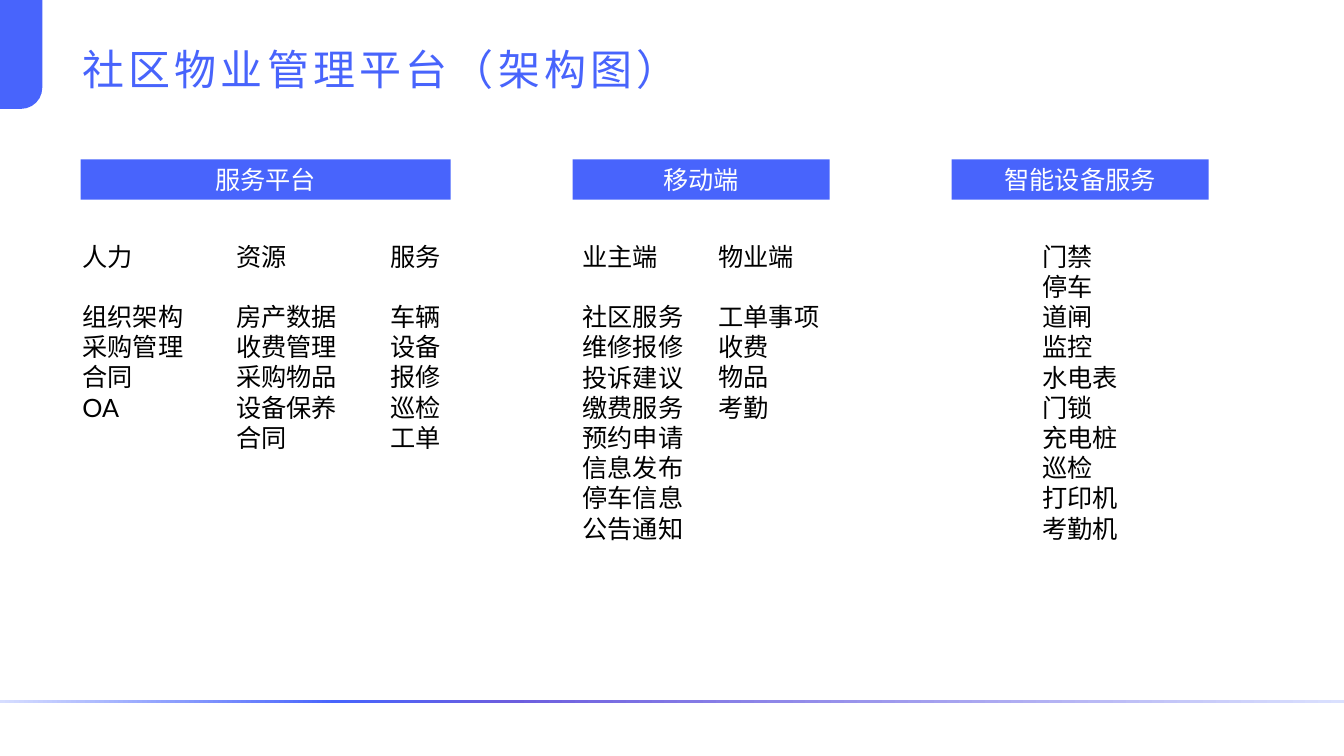
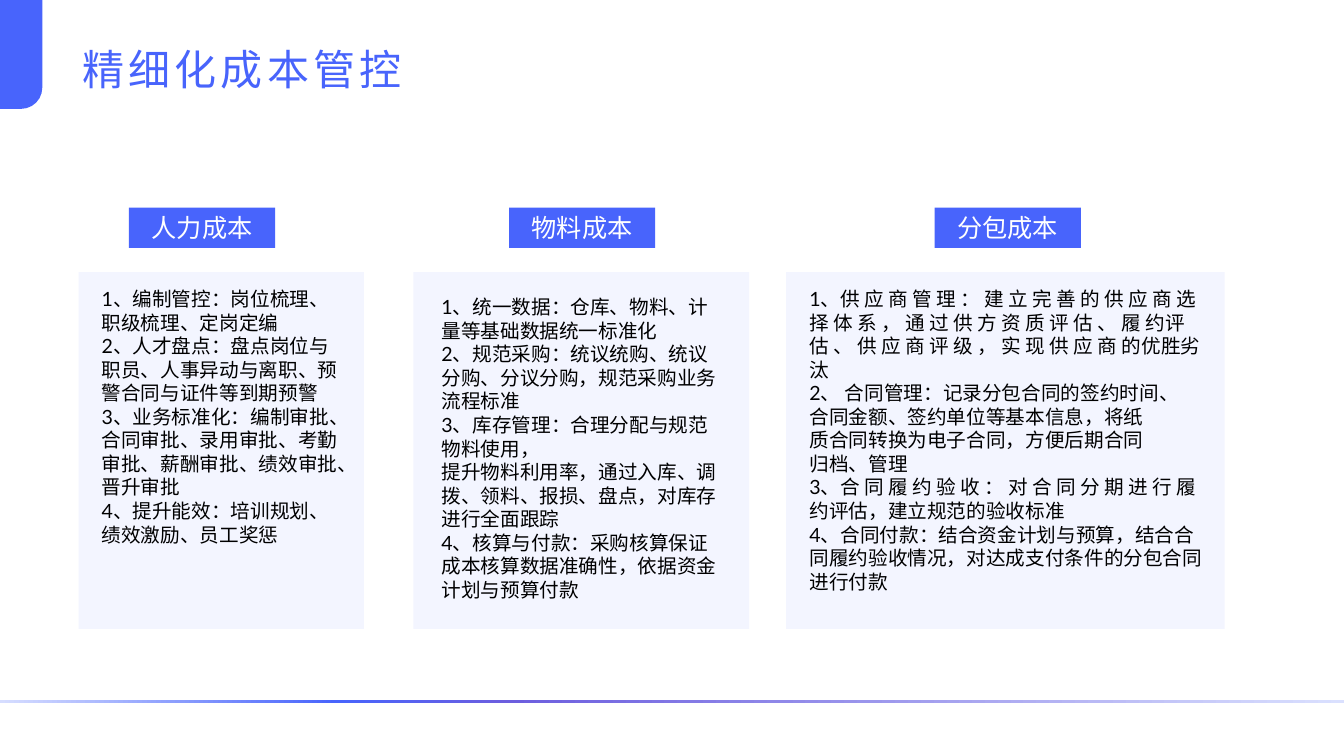
"""Build two slides on a community property platform: its structure and its cost control."""
import copy

import pptx
import pptx.util
import pptx.dml.color
import pptx.enum.shapes
import pptx.enum.text

THEME = {
    "blue": "4864FC", "pale": "F3F5FF", "white": "FFFFFF", "black": "000000",
    "fade": [(0, "D6DDFF"), (25, "4864FC"), (38, "6C5EDE"), (100, "DAE0FE")],
    "head": "Cabin", "body": "Lato",
    "big": 30, "mid": 18, "small": 14,
}
KIND = pptx.enum.shapes.MSO_SHAPE
RGB = pptx.dml.color.RGBColor.from_string

deck = pptx.Presentation()
deck.slide_width = pptx.util.Inches(13.33)
deck.slide_height = pptx.util.Inches(7.5)
COL = deck.slide_width / 100
ROW = deck.slide_height / 100


def block(slide, x, y, w, h, fill=None, kind=KIND.RECTANGLE):
    """Add a filled shape, or a text box without fill, in hundredths of the slide."""
    area = [round(n) for n in (x * COL, y * ROW, w * COL, h * ROW)]
    if fill is None:
        return slide.shapes.add_textbox(*area)
    shape = slide.shapes.add_shape(kind, *area)
    shape.shadow.inherit = False
    shape.line.fill.background()
    shape.fill.solid()
    shape.fill.fore_color.rgb = RGB(THEME[fill])
    return shape


def write(shape, text, size, color="black", font="body", wrap=True, center=False):
    """Set the text of a shape and format every run."""
    frame = shape.text_frame
    frame.text = text
    frame.word_wrap = wrap
    for para in frame.paragraphs:
        if center:
            para.alignment = pptx.enum.text.PP_ALIGN.CENTER
        for run in para.runs:
            run.font.size = pptx.util.Pt(THEME[size])
            run.font.name = THEME[font]
            run.font.color.rgb = RGB(THEME[color])
    return frame


pages = []
for title in ("社区物业管理平台（架构图）", "精细化成本管控"):
    page = deck.slides.add_slide(deck.slide_layouts[6])
    pages.append(page)

    tab = block(page, -2.48, 4.4, 8.1, 5.6, "blue", KIND.ROUND_1_RECTANGLE)
    tab.adjustments[0] = 0.5
    tab.rotation = 90

    band = block(page, 0, 92.53, 100, 0.53, "blue")
    band.fill.gradient()
    band.fill.gradient_angle = 0
    stops = band.fill.gradient_stops
    first = stops[0]._gs
    for _ in THEME["fade"][2:]:
        first.addnext(copy.deepcopy(first))
    for stop, (spot, tint) in zip(band.fill.gradient_stops, THEME["fade"]):
        stop.position = spot / 100
        stop.color.rgb = RGB(tint)

    frame = write(block(page, 5.4, 4, 86.25, 9.07), title, "big", "blue", "head")
    frame.vertical_anchor = pptx.enum.text.MSO_ANCHOR.BOTTOM
    for run in frame.paragraphs[0].runs:
        run.font._element.set("spc", "300")

bars = [
    (0, 6, 21.07, 27.53, "服务平台"),
    (0, 42.6, 21.07, 19.13, "移动端"),
    (0, 70.8, 21.07, 19.13, "智能设备服务"),
    (1, 9.6, 27.47, 10.88, "人力成本"),
    (1, 37.88, 27.47, 10.88, "物料成本"),
    (1, 69.54, 27.47, 10.88, "分包成本"),
]
for num, x, y, w, label in bars:
    write(block(pages[num], x, y, w, 5.33, "blue"), label, "mid", "white", center=True)

lists = [
    (5.4, "人力", "组织架构 采购管理 合同 OA"),
    (16.84, "资源", "房产数据 收费管理 采购物品 设备保养 合同"),
    (28.28, "服务", "车辆 设备 报修 巡检 工单"),
    (42.6, "业主端", "社区服务 维修报修 投诉建议 缴费服务 预约申请 信息发布 停车信息 公告通知"),
    (52.73, "物业端", "工单事项 收费 物品 考勤"),
    (76.8, "", "门禁 停车 道闸 监控 水电表 门锁 充电桩 巡检 打印机 考勤机"),
]
for x, head, items in lists:
    lines = f"{head} {items}".split()
    wide = 1.5 + 1.88 * max(map(len, lines))
    area = block(pages[0], x, 31.2, wide, 1.33 + 4.03 * len(lines))
    frame = write(area, "\n".join(lines), "mid", wrap=False)
    if head:
        frame.paragraphs[0].space_after = pptx.util.Pt(21.6)

cards = [
    (5.85, 21.22, 6.83, 37.33, 19.35, [
        "1、编制管控：岗位梳理、职级梳理、定岗定编",
        "2、人才盘点：盘点岗位与职员、人事异动与离职、预警合同与证件等到期预警",
        "3、业务标准化：编制审批、合同审批、录用审批、考勤审批、薪酬审批、绩效审批、晋升审批",
        "4、提升能效：培训规划、绩效激励、员工奖惩",
    ]),
    (30.76, 24.98, 32.11, 38.4, 22.8, [
        "1、统一数据：仓库、物料、计量等基础数据统一标准化",
        "2、规范采购：统议统购、统议分购、分议分购，规范采购业务流程标准",
        "3、库存管理：合理分配与规范物料使用，",
        "提升物料利用率，通过入库、调拨、领料、报损、盘点，对库存进行全面跟踪",
        "4、核算与付款：采购核算保证成本核算数据准确性，依据资金计划与预算付款",
    ]),
    (58.5, 32.63, 59.49, 37.33, 31.05, [
        "1、供 应 商 管 理 ： 建 立 完 善 的 供 应 商 选择 体 系 ， 通 过 供 方 资 质 评 估 、 履 约评 估 、 "
        "供 应 商 评 级 ， 实 现 供 应 商 的优胜劣汰",
        "2、 合同管理：记录分包合同的签约时间、",
        "合同金额、签约单位等基本信息，将纸",
        "质合同转换为电子合同，方便后期合同",
        "归档、管理",
        "3、合 同 履 约 验 收 ： 对 合 同 分 期 进 行 履约评估，建立规范的验收标准",
        "4、合同付款：结合资金计划与预算，结合合同履约验收情况，对达成支付条件的分包合同进行付款",
    ]),
]
for x, w, left, top, wide, lines in cards:
    block(pages[1], x, 36, w, 47.2, "pale")
    write(block(pages[1], left, top, wide, 42.1), "\n".join(lines), "small")

deck.save("out.pptx")
